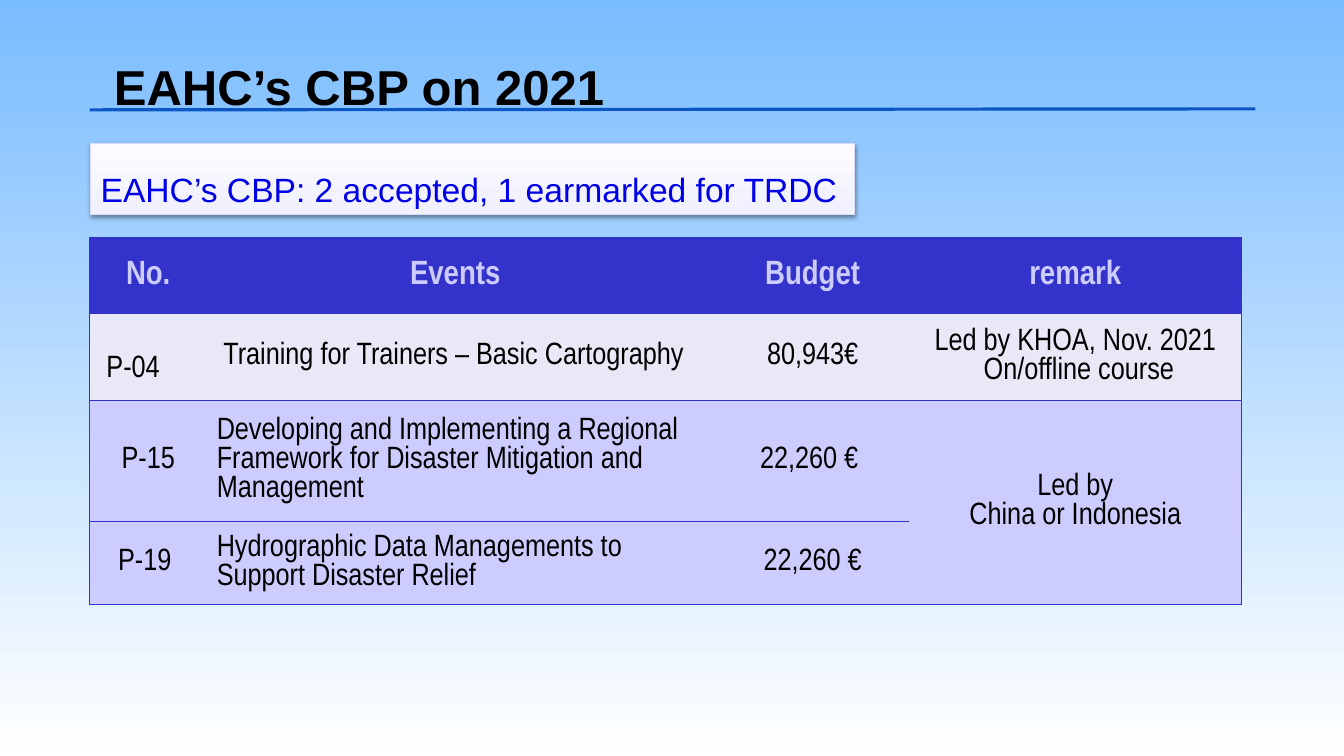
from pptx import Presentation
from pptx.dml.color import RGBColor
from pptx.enum.shapes import MSO_CONNECTOR, MSO_SHAPE
from pptx.enum.text import MSO_ANCHOR, PP_ALIGN
from pptx.oxml import parse_xml
from pptx.oxml.ns import nsdecls
from pptx.util import Inches, Pt

BLACK = RGBColor(0x00, 0x00, 0x00)
SKY = RGBColor(0x79, 0xBC, 0xFF)
WHITE = RGBColor(0xFF, 0xFF, 0xFF)
RULE_BLUE = RGBColor(0x0D, 0x57, 0xC4)
TEXT_BLUE = RGBColor(0x00, 0x00, 0xE6)
BOX_BOTTOM = RGBColor(0xF1, 0xF1, 0xFF)
BOX_TOP = RGBColor(0xFB, 0xFB, 0xFF)
BOX_LINE = RGBColor(0xDC, 0xDC, 0xFA)
INDIGO = RGBColor(0x33, 0x33, 0xCC)
LAVENDER = RGBColor(0xCC, 0xCC, 0xFF)
PALE = RGBColor(0xE8, 0xE8, 0xF6)


def set_gradient(fill, start, end, angle):
    fill.gradient()
    fill.gradient_angle = angle
    for stop, color in zip(fill.gradient_stops, (start, end)):
        stop.color.rgb = color


def format_text(text_frame, color, alignment=PP_ALIGN.LEFT, spacing=None, **font_values):
    for paragraph in text_frame.paragraphs:
        paragraph.alignment = alignment
        paragraph.line_spacing = spacing
        for run in paragraph.runs:
            run.font.color.rgb = color
            for name, value in font_values.items():
                setattr(run.font, name, value)


presentation = Presentation()
presentation.slide_width = Inches(13.33)
presentation.slide_height = Inches(7.5)
slide = presentation.slides.add_slide(presentation.slide_layouts[5])
set_gradient(slide.background.fill, SKY, WHITE, 270)

# Summary box
summary = slide.shapes.add_shape(
    MSO_SHAPE.RECTANGLE, Inches(0.9), Inches(1.42), Inches(7.58), Inches(0.71))
set_gradient(summary.fill, BOX_BOTTOM, BOX_TOP, 90)
summary.line.color.rgb = BOX_LINE
summary.line.width = Pt(0.75)
summary.shadow.inherit = False
effects = summary._element.spPr.find("{*}effectLst")
effects.append(parse_xml(
    f'<a:outerShdw {nsdecls("a")} blurRad="40000" dist="20000" dir="5400000" rotWithShape="0">'
    '<a:srgbClr val="000000"><a:alpha val="38000"/></a:srgbClr></a:outerShdw>'))
summary.text_frame.text = "EAHC’s CBP: 2 accepted, 1 earmarked for TRDC"
summary.text_frame.word_wrap = False
summary.text_frame.vertical_anchor = MSO_ANCHOR.MIDDLE
format_text(summary.text_frame, TEXT_BLUE, spacing=1.5, name="Arial", size=Pt(24))

# Title and its rule
rule = slide.shapes.add_connector(
    MSO_CONNECTOR.STRAIGHT, Inches(0.89), Inches(1.09), Inches(12.45), Inches(1.08))
rule.line.color.rgb = RULE_BLUE
rule.line.width = Pt(2.28)
rule._element.spPr.append(parse_xml(f'<a:effectLst {nsdecls("a")}/>'))

title = slide.shapes.title
title.left, title.top = Inches(1.03), Inches(-0.08)
title.width, title.height = Inches(5.12), Inches(1.28)
title.text_frame.text = "EAHC’s CBP on 2021"
title.text_frame.word_wrap = False
title.text_frame.vertical_anchor = MSO_ANCHOR.MIDDLE
format_text(title.text_frame, BLACK, spacing=2.0, name="Arial", size=Pt(35), bold=True)

# Events table
column_widths = [1.16, 5.05, 1.92, 3.29]
row_heights = [0.75, 0.86, 1.2, 0.83]
row_fills = [INDIGO, PALE, LAVENDER, LAVENDER]
rows = [
    ["No.", "Events", "Budget", "remark"],
    ["P-04", " Training for Trainers – Basic Cartography", "80,943€",
     "Led by KHOA, Nov. 2021\n On/offline course"],
    ["P-15", "Developing and Implementing a Regional Framework for Disaster "
     "Mitigation and Management", "22,260 € ", "Led by\nChina or Indonesia"],
    ["P-19 ", "Hydrographic Data Managements to Support Disaster Relief", "22,260 €", ""],
]
table = slide.shapes.add_table(
    len(rows), len(column_widths), Inches(0.89), Inches(2.36),
    Inches(sum(column_widths)), Inches(sum(row_heights))).table
for column, width in zip(table.columns, column_widths):
    column.width = Inches(width)
for row, height in zip(table.rows, row_heights):
    row.height = Inches(height)
table.cell(2, 3).merge(table.cell(3, 3))

for row_index, texts in enumerate(rows):
    header = row_index == 0
    for column_index, text in enumerate(texts):
        cell = table.cell(row_index, column_index)
        cell.text = text
        cell.vertical_anchor = MSO_ANCHOR.MIDDLE
        cell.fill.solid()
        cell.fill.fore_color.rgb = row_fills[row_index]
        left_aligned = column_index == 1 and not header
        format_text(
            cell.text_frame, LAVENDER if header else BLACK,
            PP_ALIGN.LEFT if left_aligned else PP_ALIGN.CENTER,
            name="Arial Narrow", size=Pt(24 if header else 22), bold=header)
        borders = {
            "lnL": column_index == 0,
            "lnR": column_index == len(texts) - 1,
            "lnT": not cell.is_spanned,
            "lnB": True,
        }
        properties = cell._tc.get_or_add_tcPr()
        for position, (tag, visible) in enumerate(borders.items()):
            paint = (f'<a:solidFill><a:srgbClr val="{INDIGO}"/></a:solidFill>'
                     if visible else "<a:noFill/>")
            properties.insert(position, parse_xml(
                f'<a:{tag} {nsdecls("a")} w="{Pt(1)}">{paint}</a:{tag}>'))

# Two cells sit slightly off centre
table.cell(0, 1).margin_right = Inches(0.22)
table.cell(1, 0).margin_right = Inches(0.4)
table.cell(1, 0).margin_top = Inches(0.3)

presentation.save("out.pptx")
